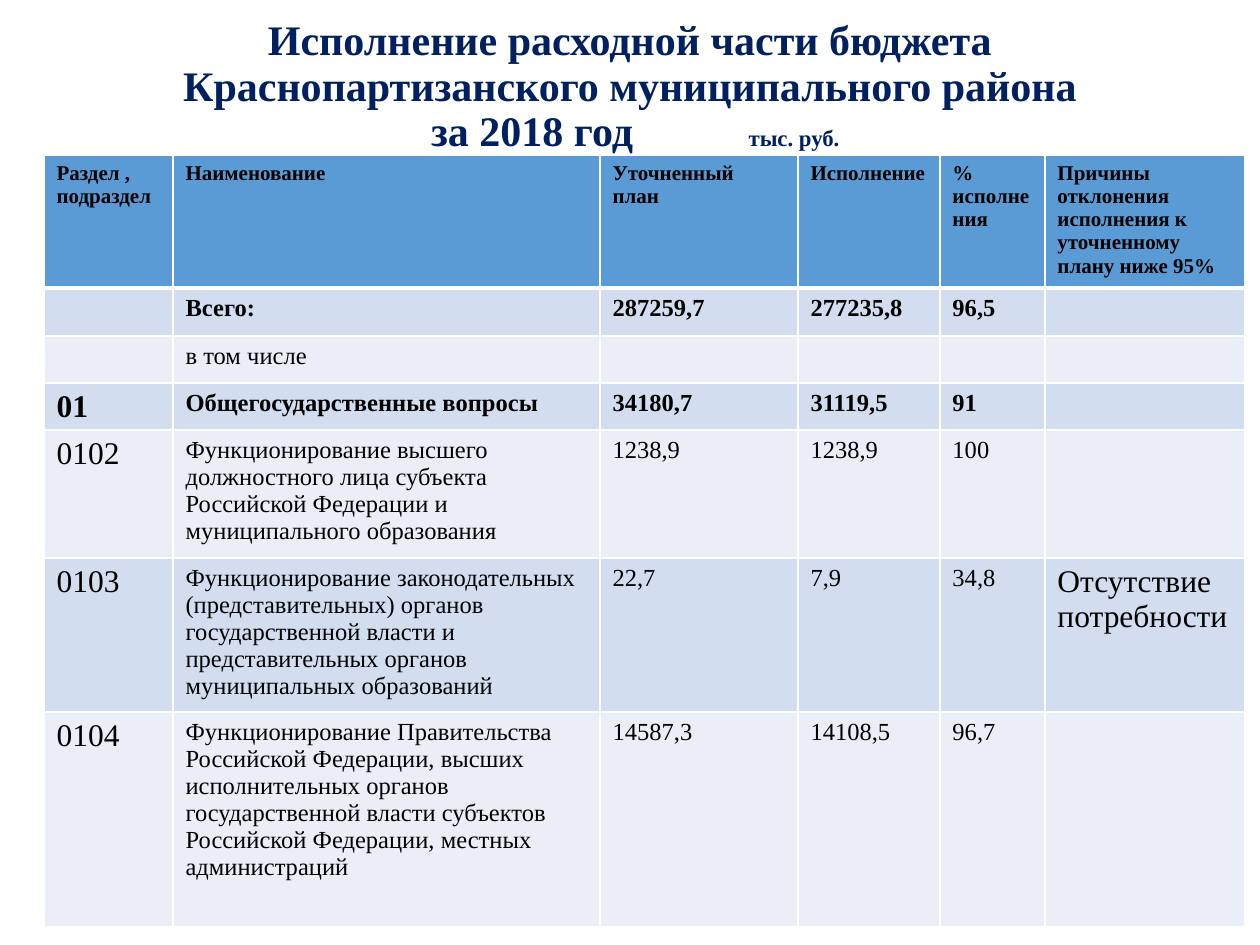
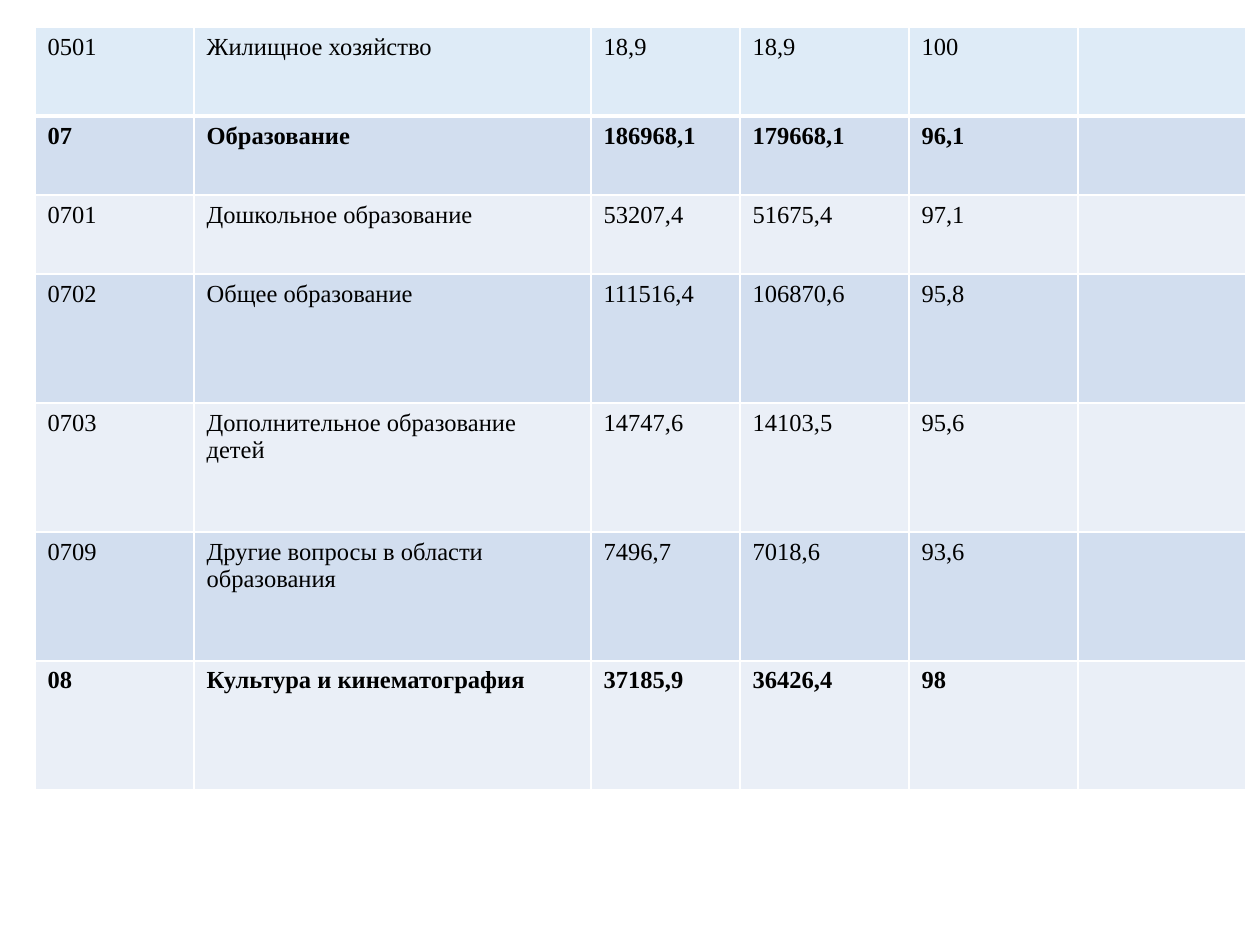
from dataclasses import dataclass

from lxml import etree
from pptx import Presentation
from pptx.dml.color import RGBColor
from pptx.enum.text import MSO_ANCHOR, PP_ALIGN
from pptx.oxml.ns import qn
from pptx.util import Pt

EMU_PER_PX = 914400 / 126
MIDDLE = MSO_ANCHOR.MIDDLE
CENTER = PP_ALIGN.CENTER


@dataclass(frozen=True)
class Theme:
    font: str = "Times New Roman"
    navy: str = "002060"
    black: str = "000000"
    border: str = "FFFFFF"
    header: str = "5B9BD5"
    pale_top: str = "DEEBF7"
    bands: tuple = ("D2DEEF", "EAEFF7")
    title_size: int = 24
    title_spacing: float = 0.9
    unit_size: int = 13
    header_size: int = 12
    body_size: int = 14
    large_size: int = 18
    thin_line: int = 1
    thick_line: int = 3


THEME = Theme()

TITLE = ("Исполнение расходной части бюджета Краснопартизанского "
         "муниципального района\v за 2018 год")
UNIT = "тыс. руб."
TITLE_BOX = (87, 0, 1086, 175)
UNIT_GAP_PT = 60

HEADER = ("Раздел , подраздел", "Наименование", "Уточненный план", "Исполнение",
          "% исполнения", "Причины отклонения исполнения к уточненному плану ниже 95%")

GENERAL_ROWS = [
    HEADER,
    ("", "Всего:", "287259,7", "277235,8", "96,5", ""),
    ("", "в том числе", "", "", "", ""),
    ("01", "Общегосударственные вопросы", "34180,7", "31119,5", "91", ""),
    ("0102", "Функционирование высшего должностного лица субъекта Российской "
             "Федерации и муниципального образования", "1238,9", "1238,9", "100", ""),
    ("0103", "Функционирование законодательных (представительных) органов "
             "государственной власти и представительных органов муниципальных "
             "образований", "22,7", "7,9", "34,8", "Отсутствие потребности"),
    ("0104", "Функционирование Правительства Российской Федерации, высших "
             "исполнительных органов государственной власти субъектов Российской "
             "Федерации, местных администраций", "14587,3", "14108,5", "96,7", ""),
]

EDUCATION_ROWS = [
    ("0501", "Жилищное хозяйство", "18,9", "18,9", "100", ""),
    ("07", "Образование", "186968,1", "179668,1", "96,1", ""),
    ("0701", "Дошкольное образование", "53207,4", "51675,4", "97,1", ""),
    ("0702", "Общее образование", "111516,4", "106870,6", "95,8", ""),
    ("0703", "Дополнительное образование детей", "14747,6", "14103,5", "95,6", ""),
    ("0709", "Другие вопросы в области образования", "7496,7", "7018,6", "93,6", ""),
    ("08", "Культура и кинематография", "37185,9", "36426,4", "98", ""),
]

GENERAL_TABLE = dict(
    rows=GENERAL_ROWS, corner=(44, 155), top_fill=THEME.header,
    widths=(129, 427, 198, 142, 105, 200),
    heights=(133, 48, 47, 47, 128, 154, 215), edge_size=THEME.large_size)
EDUCATION_TABLE = dict(
    rows=EDUCATION_ROWS, corner=(35, 27), top_fill=THEME.pale_top,
    widths=(159, 397, 149, 169, 169, 168),
    heights=(89, 79, 79, 129, 129, 129, 129), edge_size=THEME.body_size)


def px(length):
    return round(length * EMU_PER_PX)


def style_run(run, size, color, bold):
    run.font.name = THEME.font
    run.font.size = Pt(size)
    run.font.bold = bold
    run.font.color.rgb = RGBColor.from_string(color)


def add_title(slide):
    frame = slide.shapes.add_textbox(*map(px, TITLE_BOX)).text_frame
    frame.word_wrap = True
    frame.vertical_anchor = MIDDLE
    heading = frame.paragraphs[0]
    heading.alignment = CENTER
    heading.line_spacing = THEME.title_spacing
    heading.text = TITLE
    gap, unit = heading.add_run(), heading.add_run()
    gap.text, unit.text = " ", UNIT
    for run in heading.runs:
        style_run(run, THEME.title_size, THEME.navy, True)
    unit.font.size = Pt(THEME.unit_size)
    gap.font._element.set("spc", str(UNIT_GAP_PT * 100))


def set_borders(cell, top, bottom):
    """Draw the four cell edges; top and bottom are widths in points."""
    properties = cell._tc.get_or_add_tcPr()
    edges = dict(lnL=THEME.thin_line, lnR=THEME.thin_line, lnT=top, lnB=bottom)
    for edge, width in edges.items():
        line = etree.SubElement(properties, qn("a:" + edge), w=str(Pt(width)))
        fill = etree.SubElement(line, qn("a:solidFill"))
        etree.SubElement(fill, qn("a:srgbClr"), val=THEME.border)


def fill_cell(cell, text, size, bold, color):
    cell.fill.solid()
    cell.fill.fore_color.rgb = RGBColor.from_string(color)
    cell.margin_bottom = 0  # keeps full cells from stretching their row
    paragraph = cell.text_frame.paragraphs[0]
    if text:
        paragraph.text = text
        style_run(paragraph.runs[0], size, THEME.black, bold)
    else:
        etree.SubElement(paragraph._p, qn("a:endParaRPr"), sz=str(size * 100))


def is_bold(row):
    """The header, the total and two-digit sections stand out."""
    return row is HEADER or row[1] == "Всего:" or len(row[0]) == 2


def add_budget_table(slide, rows, corner, top_fill, widths, heights, edge_size):
    size = (sum(widths), sum(heights))
    table = slide.shapes.add_table(len(rows), len(widths), *map(px, corner + size)).table
    table.first_row = table.horz_banding = False
    for column, width in zip(table.columns, widths):
        column.width = px(width)
    last = len(widths) - 1
    for r, (row, height) in enumerate(zip(rows, heights)):
        table.rows[r].height = px(height)
        color = THEME.bands[(r - 1) % 2] if r else top_fill
        top = THEME.thick_line if r == 1 else THEME.thin_line
        bottom = THEME.thick_line if r == 0 else THEME.thin_line
        for c, text in enumerate(row):
            if row is HEADER:
                text_size = THEME.header_size
            elif text and c in (0, last):
                text_size = edge_size
            else:
                text_size = THEME.body_size
            cell = table.cell(r, c)
            set_borders(cell, top, bottom)
            fill_cell(cell, text, text_size, is_bold(row), color)


def main():
    deck = Presentation()
    deck.slide_width, deck.slide_height = px(1260), px(945)
    blank = deck.slide_layouts[6]
    general = deck.slides.add_slide(blank)
    add_title(general)
    add_budget_table(general, **GENERAL_TABLE)
    add_budget_table(deck.slides.add_slide(blank), **EDUCATION_TABLE)
    deck.save("out.pptx")


if __name__ == "__main__":
    main()
